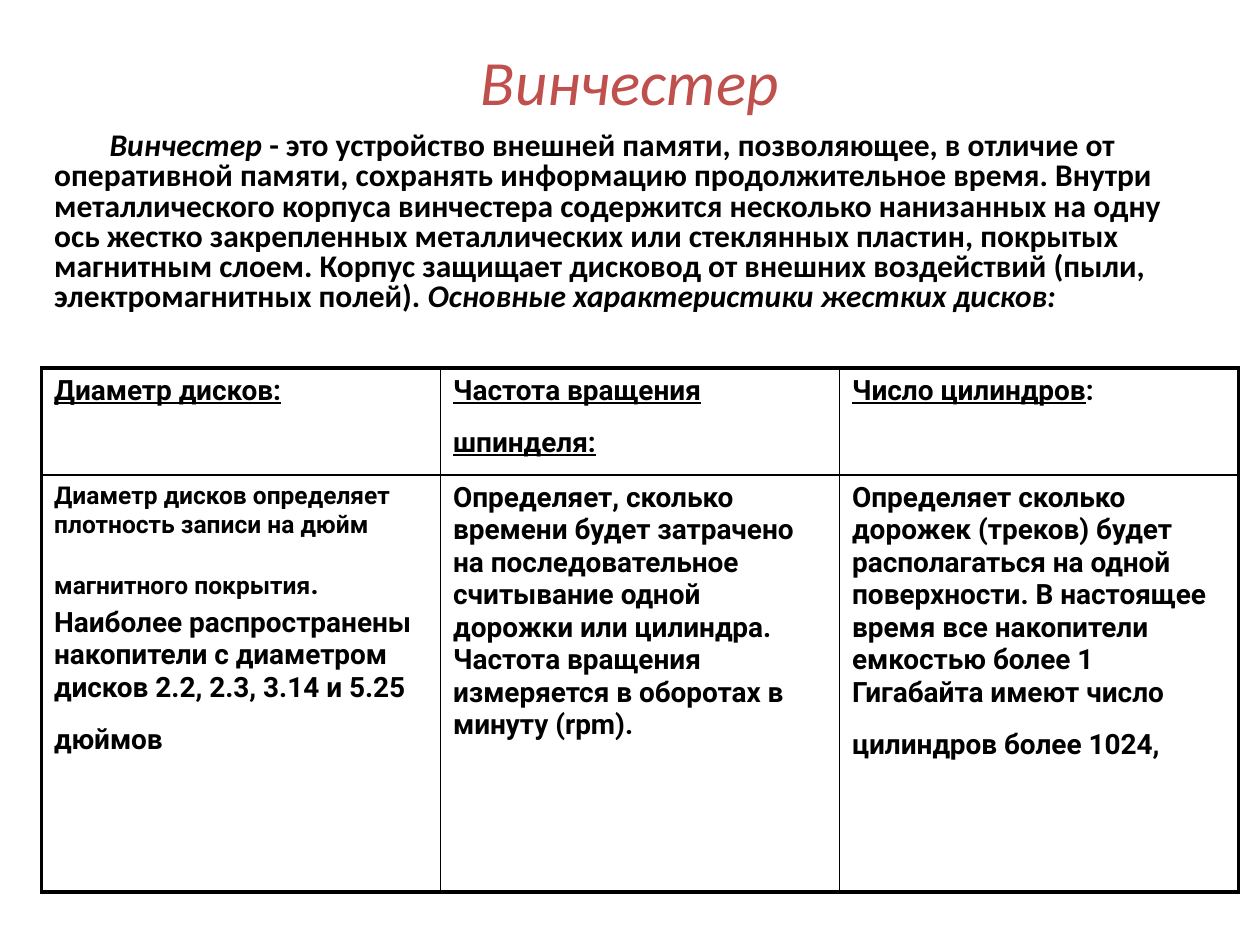
"""Build a slide that defines the hard disk and tabulates its main characteristics."""
from lxml import etree
from pptx import Presentation
from pptx.dml.color import RGBColor
from pptx.enum.text import MSO_ANCHOR, MSO_AUTO_SIZE, PP_ALIGN
from pptx.oxml.ns import qn
from pptx.util import Inches, Pt

CENTER, LEFT = PP_ALIGN.CENTER, PP_ALIGN.LEFT
MIDDLE, TOP = MSO_ANCHOR.MIDDLE, MSO_ANCHOR.TOP
NO_AUTOFIT = MSO_AUTO_SIZE.NONE

THEME = {
    "heading_font": "Calibri", "table_font": "Roboto",
    "accent": "C0504D", "ink": "000000",
    "title": 36, "lead": 18, "cell": 16, "small": 14, "spacer": 28,
    "outer_line": 2.25, "inner_line": 1,
}

TITLE = "Винчестер"
LEAD = [
    ("Винчестер ", True),
    ("- это устройство внешней памяти, позволяющее, в отличие от оперативной памяти, "
     "сохранять информацию продолжительное время. Внутри металлического корпуса винчестера "
     "содержится несколько нанизанных на одну ось жестко закрепленных металлических или "
     "стеклянных пластин, покрытых магнитным слоем. Корпус защищает дисковод от внешних "
     "воздействий (пыли, электромагнитных полей). ", False),
    ("Основные характеристики жестких дисков:", True),
]
SPACER = (" ", "spacer", False)
ROWS = [
    [
        [[("Диаметр дисков:", "cell", True)]],
        [[("Частота вращения шпинделя:", "cell", True), SPACER]],
        [[("Число цилиндров", "cell", True), (":", "cell", False)]],
    ],
    [
        [
            [("Диаметр дисков определяет плотность записи на дюйм", "small", False)],
            [("магнитного покрытия", "small", False), (".", "cell", False), SPACER,
             ("Наиболее распространены накопители с диаметром дисков "
              "2.2, 2.3, 3.14 и 5.25 дюймов", "cell", False), SPACER],
        ],
        [[("Определяет, сколько времени будет затрачено на последовательное считывание "
           "одной дорожки или цилиндра. Частота вращения измеряется в оборотах "
           "в минуту (rpm).", "cell", False)]],
        [[("Определяет сколько дорожек (треков) будет располагаться на одной поверхности. "
           "В настоящее время все накопители емкостью более 1 Гигабайта имеют число "
           "цилиндров более 1024,", "cell", False), SPACER]],
    ],
]
ROW_HEIGHTS = [0.85, 3.31]
TABLE_LEFT, TABLE_TOP, TABLE_WIDTH = 0.33, 2.92, 9.5


def add_span(para, text, size, font, color="ink", bold=True, italic=False, underline=False):
    span = para.add_run()
    span.text = text
    span.font.name = THEME[font]
    span.font.size = Pt(THEME[size])
    span.font.color.rgb = RGBColor.from_string(THEME[color])
    span.font.bold, span.font.italic, span.font.underline = bold, italic, underline


def set_relative_space_before(para, percent=20):
    properties = para._p.get_or_add_pPr()
    space = etree.SubElement(properties, qn("a:spcBef"))
    etree.SubElement(space, qn("a:spcPct")).set("val", str(percent * 1000))


def place(box, left, top, width, height, anchor):
    box.left, box.top = Inches(left), Inches(top)
    box.width, box.height = Inches(width), Inches(height)
    frame = box.text_frame
    frame.word_wrap = True
    frame.auto_size = NO_AUTOFIT
    frame.vertical_anchor = anchor
    return frame.paragraphs[0]


def set_borders(cell, widths):
    properties = cell._tc.get_or_add_tcPr()
    for side, width in widths.items():
        line = etree.SubElement(properties, qn(f"a:ln{side}"), w=str(Pt(width)))
        fill = etree.SubElement(line, qn("a:solidFill"))
        etree.SubElement(fill, qn("a:srgbClr"), val=THEME["ink"])


def fill_cell(cell, paragraphs):
    for index, spans in enumerate(paragraphs):
        frame = cell.text_frame
        para = frame.add_paragraph() if index else frame.paragraphs[0]
        set_relative_space_before(para)
        for text, size, underline in spans:
            add_span(para, text, size, "table_font", underline=underline)


def add_characteristics(page):
    row_count, column_count = len(ROWS), len(ROWS[0])
    table = page.shapes.add_table(
        row_count, column_count, Inches(TABLE_LEFT), Inches(TABLE_TOP),
        Inches(TABLE_WIDTH), Inches(sum(ROW_HEIGHTS))).table
    table.first_row = table.horz_banding = False
    outer, inner = THEME["outer_line"], THEME["inner_line"]
    for r, row in enumerate(ROWS):
        table.rows[r].height = Inches(ROW_HEIGHTS[r])
        for c, paragraphs in enumerate(row):
            cell = table.cell(r, c)
            edges = {"L": c == 0, "R": c == column_count - 1,
                     "T": r == 0, "B": r == row_count - 1}
            set_borders(cell, {side: outer if edge else inner for side, edge in edges.items()})
            cell.fill.background()
            fill_cell(cell, paragraphs)


def main():
    deck = Presentation()
    deck.slide_width, deck.slide_height = Inches(10), Inches(7.5)
    page = deck.slides.add_slide(deck.slide_layouts[0])

    para = place(page.shapes.title, 0.75, 0.28, 8.5, 0.71, MIDDLE)
    para.alignment = CENTER
    add_span(para, TITLE, "title", "heading_font", "accent", bold=False, italic=True)

    para = place(page.placeholders[1], 0.33, 1, 9.33, 1.75, TOP)
    para.alignment = LEFT
    para.line_spacing = 0.8
    set_relative_space_before(para)
    para._p.get_or_add_pPr().set("indent", str(Inches(0.44)))
    for text, italic in LEAD:
        add_span(para, text, "lead", "heading_font", italic=italic)

    add_characteristics(page)
    deck.save("out.pptx")


if __name__ == "__main__":
    main()
